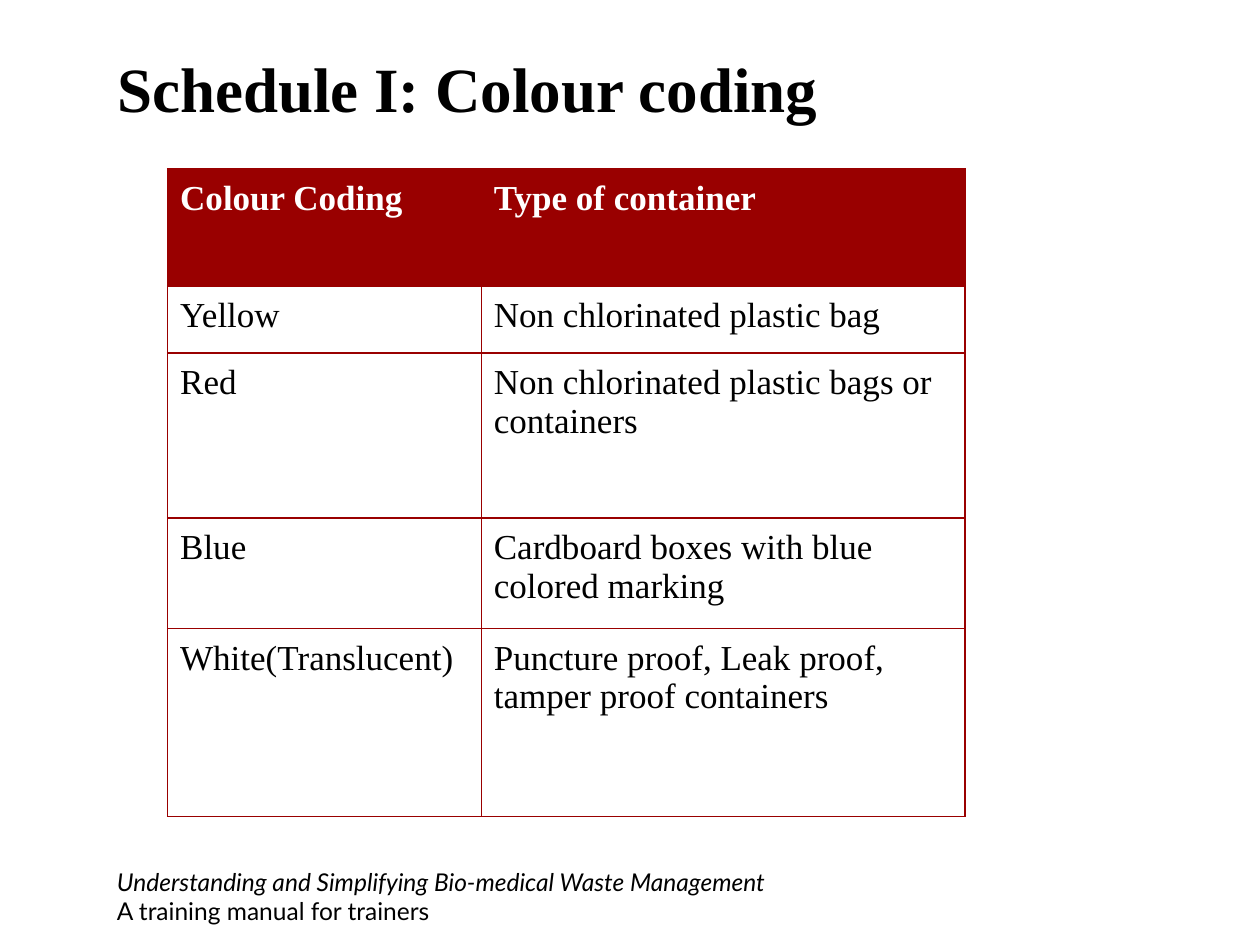
"""Build a slide with a table of waste colour codes and container types."""
from lxml import etree
from pptx import Presentation
from pptx import util as u
from pptx.dml.color import RGBColor
from pptx.enum import text
from pptx.oxml.ns import qn

COLORS = {"red": "990000", "black": "000000", "white": "FFFFFF"}
ROWS = [
    ("Colour Coding", "Type of container"),
    ("Yellow", "Non chlorinated plastic bag"),
    ("Red", "Non chlorinated plastic bags or containers"),
    ("Blue", "Cardboard boxes with blue colored marking"),
    ("White(Translucent)", "Puncture proof, Leak proof, tamper proof containers"),
]
COLUMN_WIDTHS = [2.49, 3.84]
ROW_HEIGHTS = [0.93, 0.53, 1.31, 0.88, 1.49]


def format_runs(paragraph, font_name, size, color, bold=False, italic=False):
    paragraph.alignment = text.PP_ALIGN.LEFT
    for run in paragraph.runs:
        run.font.name = font_name
        run.font.size = u.Pt(size)
        run.font.bold = bold
        run.font.italic = italic
        run.font.color.rgb = RGBColor.from_string(COLORS[color])


def add_borders(cell, color):
    properties = cell._tc.get_or_add_tcPr()
    for position, side in enumerate(("lnL", "lnR", "lnT", "lnB")):
        line = etree.Element(qn(f"a:{side}"), w=str(u.Pt(1)))
        fill = etree.SubElement(line, qn("a:solidFill"))
        etree.SubElement(fill, qn("a:srgbClr"), val=COLORS[color])
        properties.insert(position, line)


presentation = Presentation()
presentation.slide_width = u.Inches(10)
presentation.slide_height = u.Inches(7.5)
slide = presentation.slides.add_slide(presentation.slide_layouts[5])

title = slide.shapes.title
title.left, title.top = u.Inches(0.83), u.Inches(0.28)
title.width, title.height = u.Inches(7.09), u.Inches(1.25)
title.text_frame.text = "Schedule I: Colour coding"
title.text_frame.vertical_anchor = text.MSO_ANCHOR.TOP
title.text_frame.margin_top = u.Inches(0.11)
title.text_frame.auto_size = text.MSO_AUTO_SIZE.NONE
format_runs(title.text_frame.paragraphs[0], "Times New Roman", 36, "black", bold=True)

table = slide.shapes.add_table(
    len(ROWS), len(COLUMN_WIDTHS), u.Inches(1.33), u.Inches(1.34),
    u.Inches(sum(COLUMN_WIDTHS)), u.Inches(sum(ROW_HEIGHTS)),
).table
table.horz_banding = False
for column, width in zip(table.columns, COLUMN_WIDTHS):
    column.width = u.Inches(width)
for row_index, (labels, height) in enumerate(zip(ROWS, ROW_HEIGHTS)):
    table.rows[row_index].height = u.Inches(height)
    is_header = row_index == 0
    for column_index, label in enumerate(labels):
        cell = table.cell(row_index, column_index)
        cell.text_frame.text = label
        cell.margin_left = cell.margin_right = u.Inches(0.1)
        cell.margin_top = cell.margin_bottom = u.Inches(0.08)
        cell.vertical_anchor = text.MSO_ANCHOR.TOP
        if is_header:
            cell.fill.solid()
            cell.fill.fore_color.rgb = RGBColor.from_string(COLORS["red"])
        else:
            cell.fill.background()
        add_borders(cell, "red")
        format_runs(cell.text_frame.paragraphs[0], "Times New Roman", 20,
                    "white" if is_header else "black", bold=is_header)

footer = slide.shapes.add_textbox(
    u.Inches(0.83), u.Inches(6.83), u.Inches(5.76), u.Inches(0.52))
footer.text_frame.word_wrap = True
footer.text_frame.text = (
    "Understanding and Simplifying Bio-medical Waste Management\n"
    "A training manual for trainers")
for paragraph, italic in zip(footer.text_frame.paragraphs, (True, False)):
    format_runs(paragraph, "Lato", 14, "black", italic=italic)

presentation.save("out.pptx")
